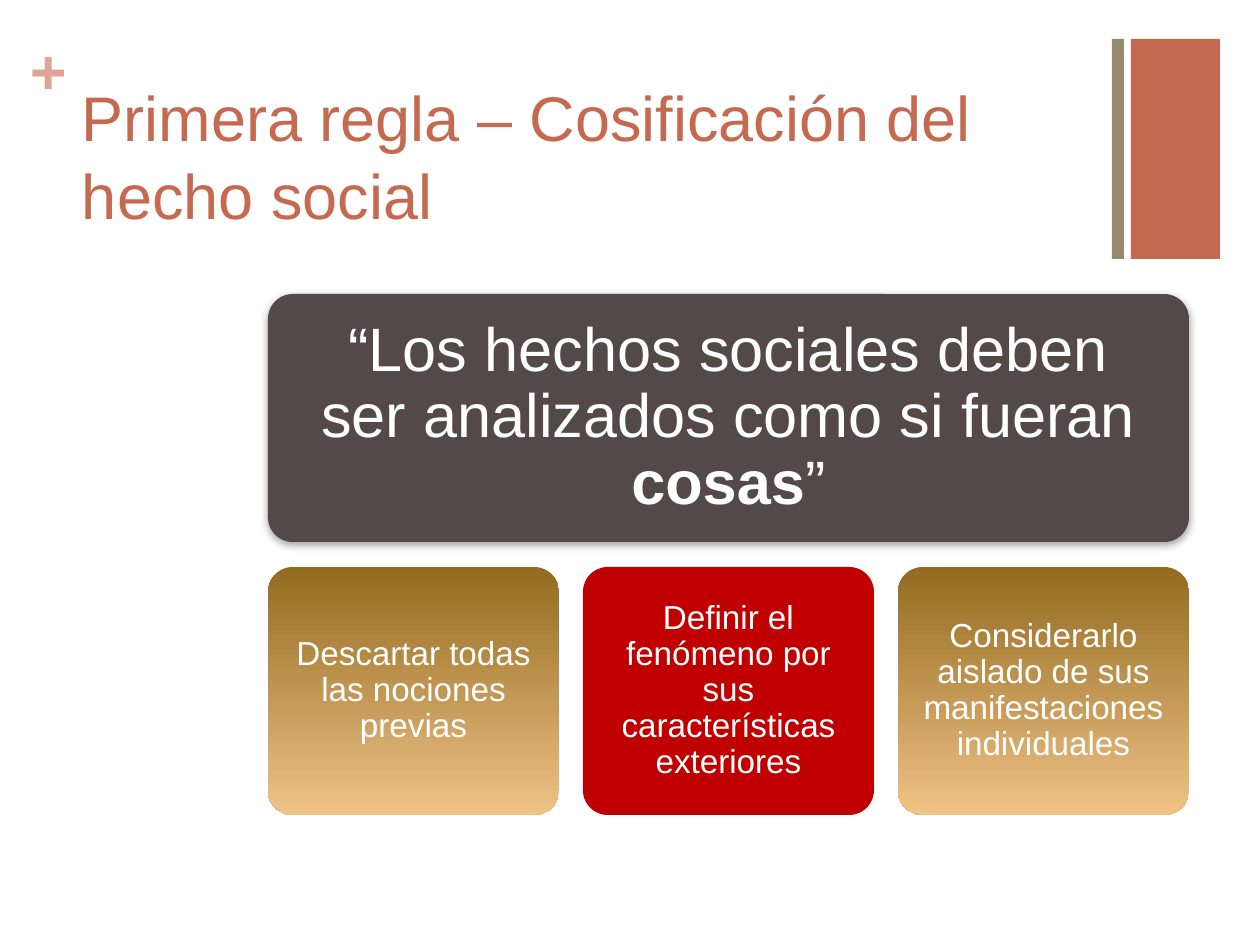
"""Builds a slide on the first rule: treating social facts as things."""
from lxml.etree import SubElement
from pptx import Presentation
from pptx.dml.color import RGBColor
from pptx.enum.shapes import MSO_SHAPE as Shape
from pptx.enum.text import MSO_ANCHOR as Anchor, MSO_AUTO_SIZE as AutoSize, PP_ALIGN as Align
from pptx.oxml.ns import qn
from pptx.util import Emu, Pt

TERRACOTTA = RGBColor(0xC6, 0x69, 0x51)
PINK = RGBColor(0xDD, 0xA5, 0x97)
OLIVE = RGBColor(0x92, 0x8B, 0x70)
BROWN = RGBColor(0x53, 0x49, 0x49)
RED = RGBColor(0xC0, 0x00, 0x00)
GOLD = [RGBColor(0x93, 0x6B, 0x21), RGBColor(0xEF, 0xC2, 0x86)]
WHITE = RGBColor(0xFF, 0xFF, 0xFF)

TITLE = "Primera regla – Cosificación del hecho social"
QUOTE = [("“Los hechos sociales deben ser analizados como si fueran ", False),
         ("cosas", True), ("”", False)]
STEPS = [
    ("Descartar todas las nociones previas", GOLD),
    ("Definir el fenómeno por sus características exteriores", RED),
    ("Considerarlo aislado de sus manifestaciones individuales", GOLD),
]
BARS = [((1131, 39, 89, 220), TERRACOTTA), ((1112, 39, 12, 220), OLIVE)]
LEFT, TOP, WIDTH, HEIGHT, GAP = 268, 294, 921, 248, 24


def px(length):
    return Emu(round(length * 914400 / 126))


def write(shape, runs, *, size, color, align=Align.LEFT, anchor=Anchor.TOP,
          insets=(0, 0, 0, 0), spacing=1.0, wrap=True):
    frame = shape.text_frame
    frame.word_wrap = wrap
    frame.auto_size = AutoSize.NONE
    frame.vertical_anchor = anchor
    (frame.margin_left, frame.margin_top,
     frame.margin_right, frame.margin_bottom) = map(px, insets)
    para = frame.paragraphs[0]
    para.alignment = align
    para.line_spacing = spacing
    para.space_before = Pt(0)
    for text, bold in runs:
        span = para.add_run()
        span.text = text
        font = span.font
        font.name, font.size, font.bold = "Arial", Pt(size), bold
        font.color.rgb = color


def add_block(slide, kind, place, fill):
    block = slide.shapes.add_shape(kind, *map(px, place))
    block.shadow.inherit = False
    block.line.fill.background()
    if isinstance(fill, list):
        block.fill.gradient()
        block.fill.gradient_angle = 270
        for stop, color, position in zip(block.fill.gradient_stops, fill, (0, 1)):
            stop.color.rgb = color
            stop.position = position
    else:
        block.fill.solid()
        block.fill.fore_color.rgb = fill
    return block


def add_card(slide, place, fill, runs, *, size, inset):
    card = add_block(slide, Shape.ROUNDED_RECTANGLE, place, fill)
    card.adjustments[0] = 0.1
    write(card, runs, size=size, color=WHITE, align=Align.CENTER,
          anchor=Anchor.MIDDLE, insets=[inset] * 4, spacing=0.9)
    return card


def add_shadow(shape):
    effects = shape.element.spPr.find(qn("a:effectLst"))
    shadow = SubElement(effects, qn("a:outerShdw"), blurRad=str(Pt(5)),
                        dist=str(Pt(2)), dir="5400000", rotWithShape="0")
    color = SubElement(shadow, qn("a:srgbClr"), val="808080")
    SubElement(color, qn("a:alpha"), val="75000")


def main():
    deck = Presentation()
    deck.slide_width, deck.slide_height = px(1260), px(945)
    slide = deck.slides.add_slide(deck.slide_layouts[5])

    title = slide.shapes.title
    title.left, title.top, title.width, title.height = map(px, (69, 67, 1041, 154))
    write(title, [(TITLE, False)], size=36, color=TERRACOTTA,
          insets=(13, 9, 13, 0), spacing=1.03)

    for place, color in BARS:
        add_block(slide, Shape.RECTANGLE, place, color)
    plus = slide.shapes.add_textbox(*map(px, (30, 32, 37, 77)))
    write(plus, [("+", True)], size=36, color=PINK, wrap=False)

    quote = add_card(slide, (LEFT, TOP, WIDTH, HEIGHT), BROWN, QUOTE, size=35, inset=25)
    add_shadow(quote)

    step_width = (WIDTH - GAP * (len(STEPS) - 1)) // len(STEPS)
    for index, (text, fill) in enumerate(STEPS):
        place = (LEFT + index * (step_width + GAP), TOP + HEIGHT + GAP + 1,
                 step_width, HEIGHT)
        add_card(slide, place, fill, [(text, False)], size=19, inset=16)

    deck.save("out.pptx")


if __name__ == "__main__":
    main()
